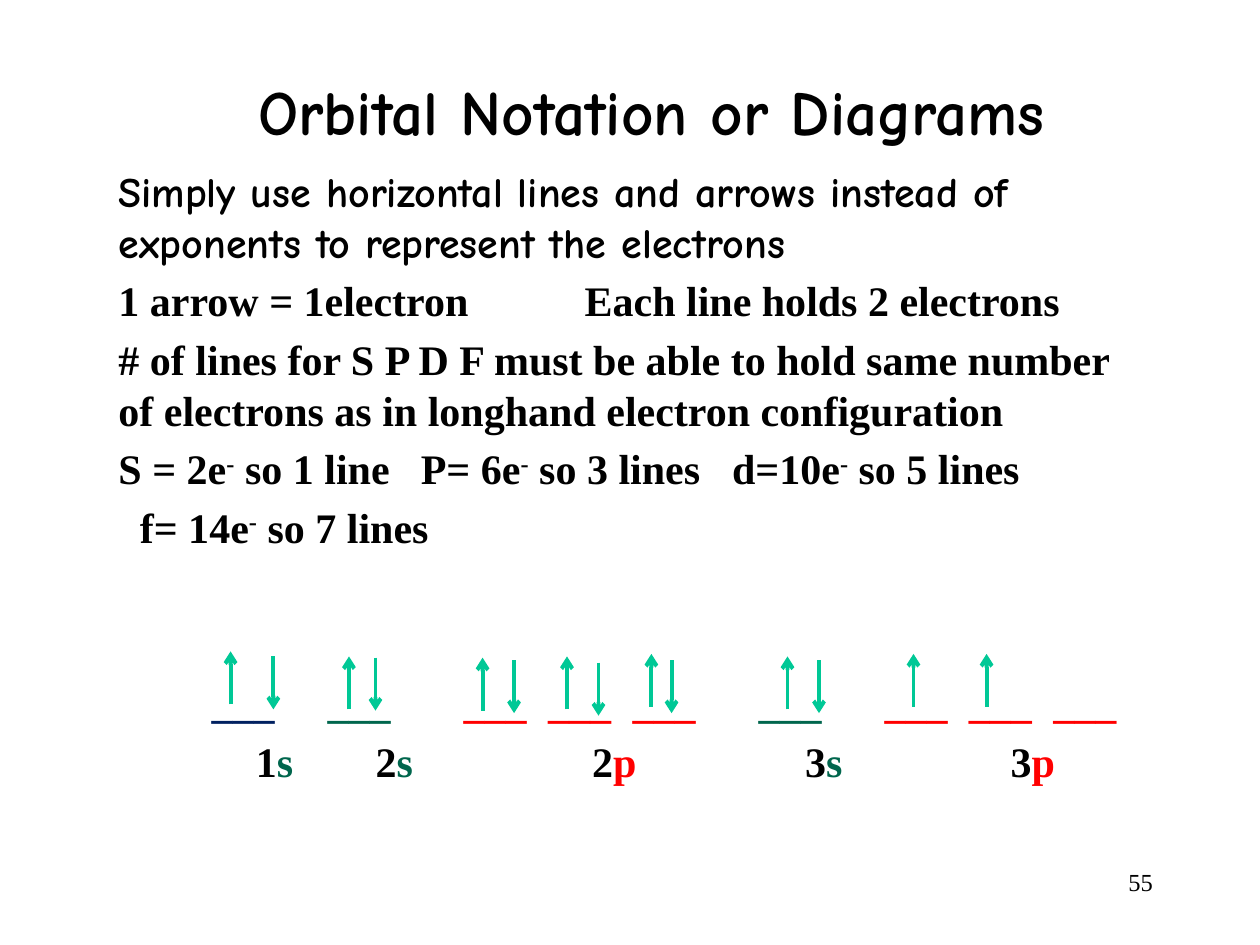
import pptx
import pptx.util
import pptx.dml.color
import pptx.enum.shapes
import pptx.enum.text
import pptx.oxml.ns
from lxml import etree

Inches, Pt = pptx.util.Inches, pptx.util.Pt
RGBColor = pptx.dml.color.RGBColor
ALIGN = pptx.enum.text.PP_ALIGN
ANCHOR = pptx.enum.text.MSO_ANCHOR
qn = pptx.oxml.ns.qn

BLACK = RGBColor(0, 0, 0)
NAVY = RGBColor(0x00, 0x20, 0x60)
GREEN = RGBColor(0x00, 0x66, 0x4D)
RED = RGBColor(0xFF, 0, 0)
MINT = RGBColor(0x00, 0xC8, 0x96)
HAND, SERIF = "Comic Neue", "Times New Roman"

# Content: "^" toggles superscript, a tab moves to the next stop
TITLE = "Orbital Notation or Diagrams"
RULES = [  # text, font, indent, tab stops
    ("Simply use horizontal lines and arrows instead of exponents "
     "to represent the electrons", HAND, 0, []),
    ("1 arrow = 1electron\tEach line holds 2 electrons", SERIF, 0, [3.7]),
    ("# of lines for S P D F must be able to hold same number of electrons "
     "as in longhand electron configuration", SERIF, 0, []),
    ("S = 2e^-^ so 1 line\tP= 6e^-^ so 3 lines\td=10e^-^ so 5 lines",
     SERIF, 0, [2.4, 4.87]),
    ("f= 14e^-^ so 7 lines", SERIF, 0.17, []),
]
ORBITALS = [  # shell, subshell, line colour, line count, first line x, label x
    ("1", "s", NAVY, 1, 1.68, 2.03),
    ("2", "s", GREEN, 1, 2.6, 2.98),
    ("2", "p", RED, 3, 3.68, 4.7),
    ("3", "s", GREEN, 1, 6.02, 6.39),
    ("3", "p", RED, 3, 7.02, 8.02),
]
LABEL_COLOR = {"s": GREEN, "p": RED}
LINE_STEP = 0.67
UP_ARROWS = [(1.83, 5.17), (2.77, 5.21), (3.83, 5.22), (4.5, 5.21),
             (5.17, 5.19), (6.25, 5.21), (7.25, 5.19), (7.83, 5.19)]
DOWN_ARROWS = [(2.17, 5.21), (2.98, 5.22), (4.08, 5.24), (4.75, 5.26),
               (5.33, 5.24), (6.5, 5.24)]
ARROW_LENGTH = 0.42
TEXT_LEFT = 0.94
PAGE = "55"


def add_run(paragraph, text, font, size, color=BLACK, bold=True, raised=False):
    run = paragraph.add_run()
    run.text = text
    run.font.name, run.font.size = font, Pt(size)
    run.font.bold, run.font.color.rgb = bold, color
    if raised:
        run.font._element.set("baseline", "30000")


def add_box(slide, left, top, width, height):
    frame = slide.shapes.add_textbox(
        Inches(left), Inches(top), Inches(width), Inches(height)).text_frame
    frame.word_wrap = True
    frame.margin_left = frame.margin_right = 0
    frame.margin_top = frame.margin_bottom = 0
    return frame


def next_paragraph(frame, index, stops, indent=0):
    paragraph = frame.add_paragraph() if index else frame.paragraphs[0]
    paragraph.line_spacing = Pt(29)
    paragraph.space_before = Pt(4.5 if index else 0)
    properties = paragraph._p.get_or_add_pPr()
    properties.set("marL", str(Inches(indent)))
    if stops:
        tabs = etree.SubElement(properties, qn("a:tabLst"))
        for stop in stops:
            etree.SubElement(tabs, qn("a:tab"), pos=str(Inches(stop)), algn="l")
    return paragraph


def add_arrow(slide, x, start, end):
    arrow = slide.shapes.add_connector(
        pptx.enum.shapes.MSO_CONNECTOR.STRAIGHT,
        Inches(x), Inches(start), Inches(x), Inches(end))
    arrow.line.color.rgb, arrow.line.width = MINT, Pt(2.25)
    etree.SubElement(arrow.line._get_or_add_ln(), qn("a:tailEnd"), type="arrow")
    etree.SubElement(arrow._element.spPr, qn("a:effectLst"))


def main():
    deck = pptx.Presentation()
    deck.slide_width, deck.slide_height = Inches(10), Inches(7.5)
    slide = deck.slides.add_slide(deck.slide_layouts[5])

    # Title
    title = slide.shapes.title
    title.left, title.top = Inches(0.92), Inches(0.25)
    title.width, title.height = Inches(8.5), Inches(1.25)
    title.text_frame.vertical_anchor = ANCHOR.MIDDLE
    heading = title.text_frame.paragraphs[0]
    heading.alignment = ALIGN.CENTER
    add_run(heading, TITLE, HAND, 36)

    # Rules for filling the lines
    rules = add_box(slide, TEXT_LEFT, 1.31, 8.21, 3.2)
    for index, (text, font, indent, stops) in enumerate(RULES):
        paragraph = next_paragraph(rules, index, stops, indent)
        for part, piece in enumerate(text.split("^")):
            add_run(paragraph, piece, font, 24, raised=part % 2 == 1)

    # Orbital lines and their labels
    diagram = add_box(slide, TEXT_LEFT, 5.37, 8.21, 0.9)
    line_stops = [first + step * LINE_STEP - TEXT_LEFT
                  for *_, count, first, _ in ORBITALS for step in range(count)]
    label_stops = [orbital[-1] - TEXT_LEFT for orbital in ORBITALS]
    lines = next_paragraph(diagram, 0, line_stops)
    labels = next_paragraph(diagram, 1, label_stops)
    for shell, subshell, color, count, _, _ in ORBITALS:
        add_run(lines, "\t___" * count, SERIF, 24, color)
        add_run(labels, "\t" + shell, SERIF, 24)
        add_run(labels, subshell, SERIF, 24, LABEL_COLOR[subshell])

    # Electron arrows
    for x, top in UP_ARROWS:
        add_arrow(slide, x, top + ARROW_LENGTH, top)
    for x, top in DOWN_ARROWS:
        add_arrow(slide, x, top, top + ARROW_LENGTH)

    # Page number
    page = add_box(slide, 7.17, 6.88, 1.98, 0.4).paragraphs[0]
    page.alignment = ALIGN.RIGHT
    add_run(page, PAGE, SERIF, 14, bold=False)

    deck.save("out.pptx")


if __name__ == "__main__":
    main()
